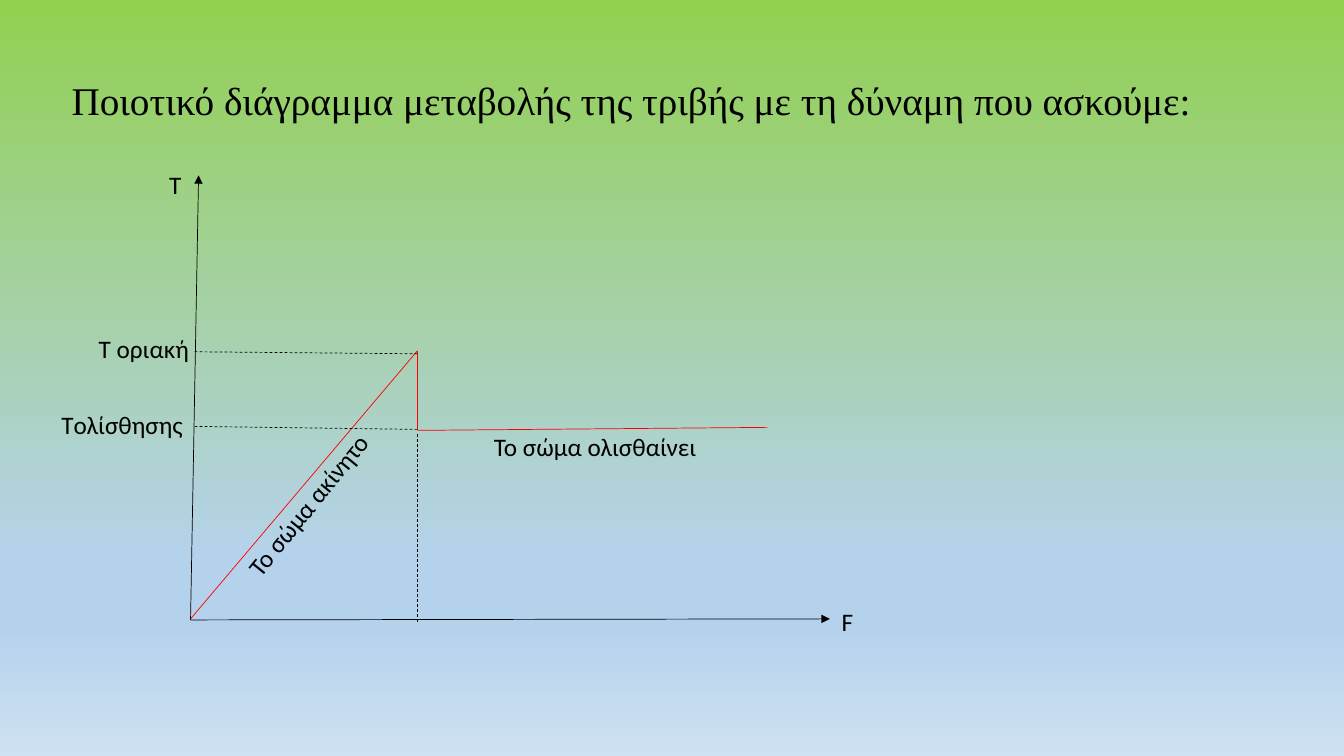
"""Build the slide with the qualitative diagram of friction against applied force."""
from copy import deepcopy

from pptx import Presentation
from pptx.dml.color import RGBColor
from pptx.enum.dml import MSO_LINE
from pptx.enum.shapes import MSO_CONNECTOR
from pptx.enum.text import MSO_ANCHOR, MSO_AUTO_SIZE as FIT, PP_ALIGN
from pptx.oxml.ns import qn
from pptx.oxml.xmlchemy import OxmlElement
from pptx.util import Inches, Pt

BLACK, RED = "000000", "FF0000"


def color(hex_code):
    return RGBColor.from_string(hex_code)


def write(frame, text, font_name, size, frame_format):
    for attribute, value in frame_format.items():
        setattr(frame, attribute, value)
    paragraph = frame.paragraphs[0]
    paragraph.alignment = PP_ALIGN.LEFT
    run = paragraph.add_run()
    run.text = text
    for attribute, value in {"name": font_name, "size": Pt(size)}.items():
        setattr(run.font, attribute, value)
    run.font.color.rgb = color(BLACK)
    return paragraph


deck = Presentation()
deck.slide_width, deck.slide_height = Inches(13.33), Inches(7.5)
slide = deck.slides.add_slide(deck.slide_layouts[5])

backdrop = slide.background.fill
backdrop.gradient()
backdrop.gradient_angle = 270
stop_list = next(slide.element.iter(qn("a:gsLst")))
for _ in range(2):
    stop_list.append(deepcopy(stop_list[0]))
sky_stops = [(0, "92D050"), (0.74, "B5D2EC"), (0.83, "B5D2EC"), (1, "CEE1F2")]
for stop, (position, shade) in zip(backdrop.gradient_stops, sky_stops):
    stop.position = position
    stop.color.rgb = color(shade)

heading = slide.shapes.title
heading_place = {"left": 0.61, "top": 0.29, "width": 11.5, "height": 1.45}
for attribute, value in heading_place.items():
    setattr(heading, attribute, Inches(value))
heading_line = write(
    heading.text_frame,
    "Ποιοτικό διάγραμμα μεταβολής της τριβής με τη δύναμη που ασκούμε:",
    "Times New Roman", 28,
    {"word_wrap": True, "auto_size": FIT.NONE, "vertical_anchor": MSO_ANCHOR.MIDDLE},
)
heading_line.line_spacing = 0.9

origin_x, origin_y = 1.89, 6.15
limit_x = 4.14
diagram_lines = [
    (origin_x, origin_y, 8.23, 6.14, BLACK, "axis"),
    (origin_x, origin_y, 1.97, 1.74, BLACK, "axis"),
    (origin_x, 6.14, limit_x, 3.48, RED, "curve"),
    (limit_x, 3.48, limit_x, 4.27, RED, "curve"),
    (limit_x, 4.27, 7.61, 4.24, RED, "curve"),
    (1.93, 3.49, limit_x, 3.51, BLACK, "guide"),
    (1.93, 4.23, limit_x, 4.26, BLACK, "guide"),
    (limit_x, 6.17, limit_x, 4.29, BLACK, "guide"),
]
for x1, y1, x2, y2, shade, role in diagram_lines:
    stroke = slide.shapes.add_connector(
        MSO_CONNECTOR.STRAIGHT, Inches(x1), Inches(y1), Inches(x2), Inches(y2))
    stroke.line.color.rgb = color(shade)
    stroke.line.width = Pt(0.5)
    if role == "guide":
        stroke.line.dash_style = MSO_LINE.DASH
    if role == "axis":
        arrowhead = OxmlElement("a:tailEnd")
        arrowhead.set("type", "triangle")
        stroke.line._get_or_add_ln().append(arrowhead)
    stroke._element.spPr.append(OxmlElement("a:effectLst"))

labels = [
    ("T", 1.58, 1.63, 0.32, 0),
    ("F", 8.25, 5.97, 0.32, 0),
    ("T οριακή", 0.88, 3.26, 1.11, 0),
    ("Tολίσθησης", 0.51, 4.01, 1.42, 0),
    ("Το σώμα ολισθαίνει", 4.8, 4.23, 2.24, 0),
    ("Το σώμα ακίνητο", 2.09, 4.8, 1.94, 309.1),
]
for text, left, top, width, angle in labels:
    label = slide.shapes.add_textbox(
        Inches(left), Inches(top), Inches(width), Inches(0.4))
    label.rotation = angle
    write(label.text_frame, text, "Calibri", 18,
          {"word_wrap": False, "auto_size": FIT.SHAPE_TO_FIT_TEXT})

deck.save("out.pptx")
